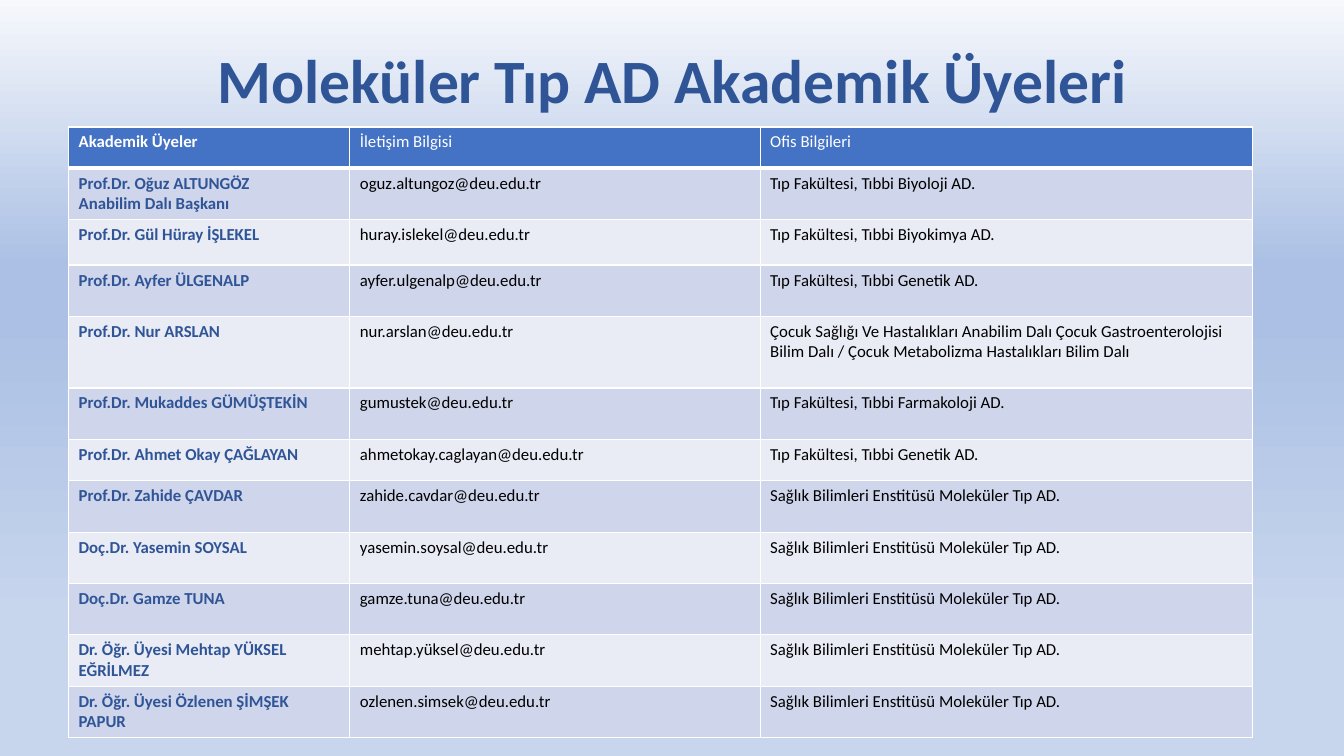
"""Builds the staff slide of the molecular medicine department."""
from lxml.etree import SubElement
from pptx import Presentation
from pptx.dml.color import RGBColor
from pptx.enum.text import MSO_ANCHOR, PP_ALIGN
from pptx.oxml import parse_xml
from pptx.oxml.ns import nsdecls, qn
from pptx.util import Inches, Pt

GENETICS = "Tıp Fakültesi, Tıbbi Genetik AD."
INSTITUTE = "Sağlık Bilimleri Enstitüsü Moleküler Tıp AD."
HEADER = ("Akademik Üyeler", "İletişim Bilgisi", "Ofis Bilgileri")
MEMBERS = [
    ("Prof.Dr. Oğuz ALTUNGÖZ\nAnabilim Dalı Başkanı", "oguz.altungoz", "Tıp Fakültesi, Tıbbi Biyoloji AD."),
    ("Prof.Dr. Gül Hüray İŞLEKEL", "huray.islekel", "Tıp Fakültesi, Tıbbi Biyokimya AD."),
    ("Prof.Dr. Ayfer ÜLGENALP", "ayfer.ulgenalp", GENETICS),
    ("Prof.Dr. Nur ARSLAN", "nur.arslan",
     "Çocuk Sağlığı Ve Hastalıkları Anabilim Dalı Çocuk Gastroenterolojisi "
     "Bilim Dalı / Çocuk Metabolizma Hastalıkları Bilim Dalı"),
    ("Prof.Dr. Mukaddes GÜMÜŞTEKİN", "gumustek", "Tıp Fakültesi, Tıbbi Farmakoloji AD."),
    ("Prof.Dr. Ahmet Okay ÇAĞLAYAN", "ahmetokay.caglayan", GENETICS),
    ("Prof.Dr. Zahide ÇAVDAR", "zahide.cavdar", INSTITUTE),
    ("Doç.Dr. Yasemin SOYSAL", "yasemin.soysal", INSTITUTE),
    ("Doç.Dr. Gamze TUNA", "gamze.tuna", INSTITUTE),
    ("Dr. Öğr. Üyesi Mehtap YÜKSEL EĞRİLMEZ", "mehtap.yüksel", INSTITUTE),
    ("Dr. Öğr. Üyesi Özlenen ŞİMŞEK PAPUR", "ozlenen.simsek", INSTITUTE),
]
COLUMN_WIDTHS = (2.79, 4.07, 4.88)
ROW_HEIGHTS = (0.41, 0.51, 0.45, 0.51, 0.71, 0.51, 0.41) + (0.51,) * 5


def rgb(value):
    return RGBColor.from_string(value)


class StaffSlide:
    font = "Calibri"
    navy, blue, white, black = "2F5597", "4472C4", "FFFFFF", "000000"
    bands = ("E9EBF5", "CFD5EA")

    def __init__(self, prs):
        self.s = prs.slides.add_slide(prs.slide_layouts[5])

    def background(self, stops):
        fill = self.s.background.fill
        fill.gradient()
        fill.gradient_angle = 270
        gs_list = next(self.s.element.iter(qn("a:gsLst")))
        for stop in list(gs_list):
            gs_list.remove(stop)
        for percent, color in stops:
            gs = SubElement(gs_list, qn("a:gs"), pos=str(percent * 1000))
            SubElement(gs, qn("a:srgbClr"), val=color)

    def text(self, tf, text, size, color, bold):
        tf.text = text
        for p in tf.paragraphs:
            for r in p.runs:
                r.font.name, r.font.size, r.font.bold = self.font, Pt(size), bold
                r.font.color.rgb = rgb(color)

    def title(self, text, left, top, width, height):
        sp = self.s.shapes.title
        sp.left, sp.top, sp.width, sp.height = map(Inches, (left, top, width, height))
        tf = sp.text_frame
        self.text(tf, text, 44, self.navy, True)
        tf.word_wrap = True
        tf.vertical_anchor = MSO_ANCHOR.MIDDLE
        tf.paragraphs[0].alignment = PP_ALIGN.CENTER
        tf.paragraphs[0].line_spacing = 0.9

    def borders(self, cell, bottom):
        tc_pr = cell._tc.get_or_add_tcPr()
        for i, (side, width) in enumerate(zip("LRTB", (1, 1, 1, bottom))):
            tc_pr.insert(i, parse_xml(
                f'<a:ln{side} {nsdecls("a")} w="{Pt(width)}"><a:solidFill>'
                f'<a:srgbClr val="{self.white}"/></a:solidFill></a:ln{side}>'))

    def table(self, rows, left, top, widths, heights):
        table = self.s.shapes.add_table(
            len(rows), len(widths), Inches(left), Inches(top),
            Inches(sum(widths)), Inches(sum(heights))).table
        for column, width in zip(table.columns, widths):
            column.width = Inches(width)
        for i, (row, height) in enumerate(zip(rows, heights)):
            table.rows[i].height = Inches(height)
            for j, text in enumerate(row):
                cell = table.cell(i, j)
                color = self.white if i == 0 else self.navy if j == 0 else self.black
                self.text(cell.text_frame, text, 12, color, j == 0)
                cell.fill.solid()
                cell.fill.fore_color.rgb = rgb(self.blue if i == 0 else self.bands[i % 2])
                self.borders(cell, 3 if i == 0 else 1)


def main():
    prs = Presentation()
    prs.slide_width, prs.slide_height = Inches(13.33), Inches(7.5)
    slide = StaffSlide(prs)
    slide.background([(0, "F6F8FC"), (35, "ABC0E4"), (42, "ABC0E4"), (82, "C7D5ED")])
    slide.title("Moleküler Tıp AD Akademik Üyeleri", 0.92, 0.4, 11.5, 0.86)
    rows = [HEADER] + [(name, f"{user}@deu.edu.tr", office) for name, user, office in MEMBERS]
    slide.table(rows, 0.68, 1.26, COLUMN_WIDTHS, ROW_HEIGHTS)
    prs.save("out.pptx")


if __name__ == "__main__":
    main()
